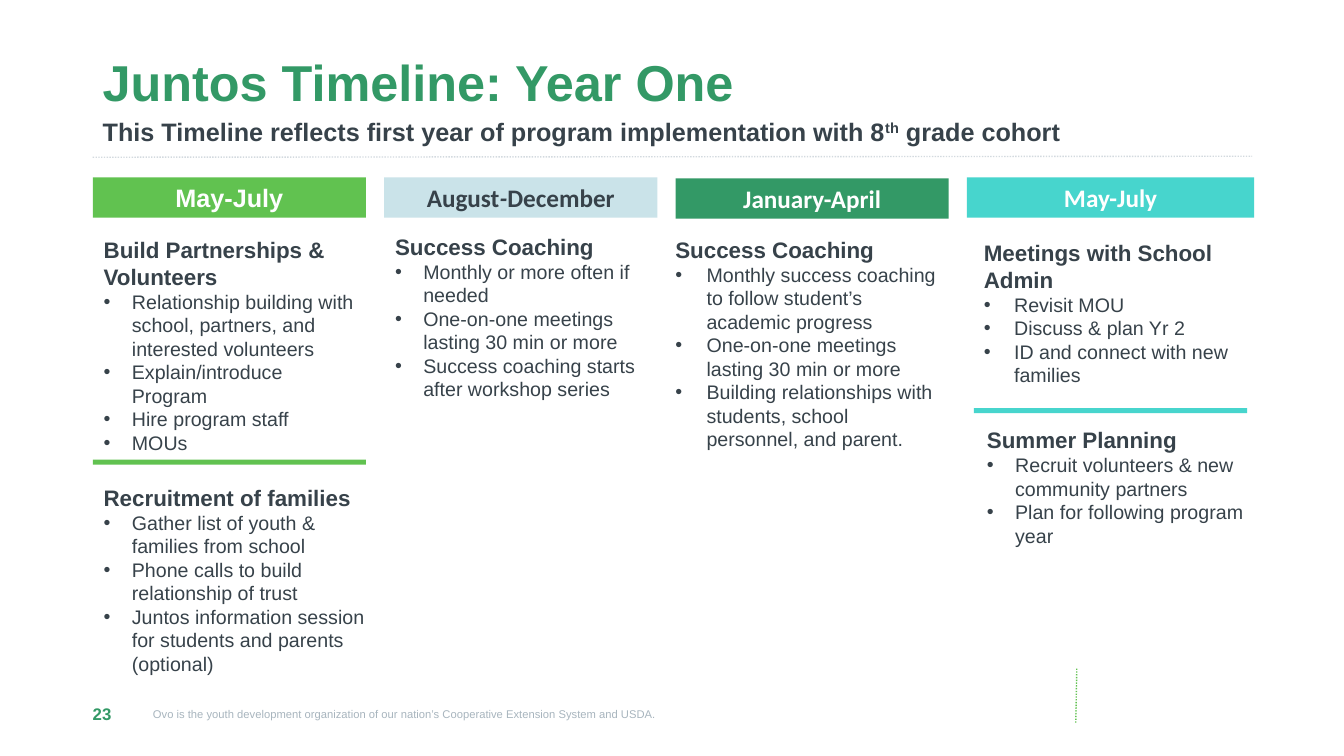
from lxml.etree import SubElement
from pptx import Presentation
from pptx.dml.color import RGBColor
from pptx.enum.dml import MSO_LINE
from pptx.enum.shapes import MSO_CONNECTOR as Connector, MSO_SHAPE as Shape
from pptx.enum.text import MSO_ANCHOR as Anchor, PP_ALIGN as Align
from pptx.oxml.ns import qn
from pptx.util import Inches, Pt

COLORS = {
    "green": "339966", "lime": "61C250", "ice": "CAE3E9", "teal": "47D5CD",
    "ink": "37424A", "white": "FFFFFF", "gray": "A8B5BE", "rule": "D3DADF",
}
CELL = 0.1  # inches per grid column and row
LEFT = 9.2  # grid column where the content starts
PITCH = 28.9  # grid columns from one period to the next
BAR_WIDTH = 27.1


def grid(*cells):
    return [Inches(cell * CELL) for cell in cells]


def color(name):
    return RGBColor.from_string(COLORS[name])


class TimelineSlide:
    """Style and drawing methods; all places are in grid columns and rows."""

    def __init__(self, presentation):
        self.slide = presentation.slides.add_slide(presentation.slide_layouts[6])
        self.font = "Arial"
        self.heading_size, self.body_size = 16, 14

    def run(self, paragraph, text, size, ink="ink", bold=False, font=None, italic=False):
        run = paragraph.add_run()
        run.text = text
        run.font.name = font or self.font
        run.font.size = Pt(size)
        run.font.bold, run.font.italic = bold, italic
        run.font.color.rgb = color(ink)
        return run

    def text_box(self, column, row, width, height, anchor=Anchor.TOP, sides=(0.1, 0.1)):
        box = self.slide.shapes.add_textbox(*grid(column, row, width, height))
        frame = box.text_frame
        frame.word_wrap = True
        frame.vertical_anchor = anchor
        frame.margin_left, frame.margin_right = map(Inches, sides)
        return frame.paragraphs[0]

    def bar(self, column, row, width, height, fill):
        shape = self.slide.shapes.add_shape(Shape.RECTANGLE, *grid(column, row, width, height))
        shape.shadow.inherit = False
        shape.fill.solid()
        shape.fill.fore_color.rgb = color(fill)
        shape.line.fill.background()
        return shape

    def header(self, column, row, width, fill, ink, font, parts):
        frame = self.bar(column, row, width, 4, fill).text_frame
        frame.vertical_anchor = Anchor.TOP
        paragraph = frame.paragraphs[0]
        paragraph.alignment = Align.CENTER
        for part in parts:
            self.run(paragraph, part, 18, ink, True, font, italic=part == "-")

    def dotted_line(self, start, end, ink):
        line = self.slide.shapes.add_connector(Connector.STRAIGHT, *grid(*start, *end))
        line.line.color.rgb = color(ink)
        line.line.width = Pt(1)
        line.line.dash_style = MSO_LINE.ROUND_DOT
        SubElement(line._element.spPr, qn("a:effectLst"))

    def activity(self, column, row, width, height, heading, items, indent=0.28):
        paragraph = self.text_box(column, row, width, height)
        self.run(paragraph, heading, self.heading_size, bold=True)
        frame = paragraph._parent
        for item in items:
            paragraph = frame.add_paragraph()
            properties = paragraph._p.get_or_add_pPr()
            properties.set("marL", str(Inches(indent)))
            properties.set("indent", str(-Inches(indent)))
            SubElement(properties, qn("a:buFont"), typeface="Arial")
            SubElement(properties, qn("a:buChar"), char="•")
            self.run(paragraph, item, self.body_size)


HEADERS = [  # fill, text colour, font, runs, row, width
    ("lime", "white", "Arial", ["May-July"], 17.6, BAR_WIDTH),
    ("ice", "ink", "Calibri", ["August", "-", "December"], 17.6, BAR_WIDTH),
    ("green", "white", "Calibri", ["January-April"], 17.7, BAR_WIDTH),
    ("teal", "white", "Calibri", ["May-July"], 17.6, 28.5),
]
ACTIVITIES = [  # column, row, width, height, heading, items, indent
    (9.3, 22.9, 27.1, 21.2, "Build Partnerships & Volunteers", [
        "Relationship building with school, partners, and interested volunteers",
        "Explain/introduce Program", "Hire program staff", "MOUs"], 0.28),
    (9.3, 47.5, 28.4, 15.6, "Recruitment of families", [
        "Gather list of youth & families from school",
        "Phone calls to build relationship of trust",
        "Juntos information session for students and parents (optional)"], 0.28),
    (38.2, 22.6, 27.1, 13.8, "Success Coaching", [
        "Monthly or more often if needed",
        "One-on-one meetings lasting 30 min or more",
        "Success coaching starts after workshop series"], 0.28),
    (66, 22.9, 28, 20.4, "Success Coaching", [
        "Monthly success coaching to follow student’s academic progress",
        "One-on-one meetings lasting 30 min or more",
        "Building relationships with students, school personnel, and parent."], 0.31),
    (96.6, 23.2, 30.4, 22.8, "Meetings with School Admin", [
        "Revisit MOU", "Discuss & plan Yr 2", "ID and connect with new families"], 0.3),
    (96.9, 41.8, 28.5, 14.8, "Summer Planning", [
        "Recruit volunteers & new community partners",
        "Plan for following program year"], 0.28),
]


def main():
    presentation = Presentation()
    presentation.slide_width, presentation.slide_height = Inches(13.33), Inches(7.5)
    timeline = TimelineSlide(presentation)

    # Footer and dotted rules
    footer = timeline.text_box(13.6, 68.8, 52.5, 4.1, Anchor.MIDDLE, (0, 0.1))
    footer.alignment = Align.RIGHT
    timeline.run(footer, "Ovo is the youth development organization of our nation’s "
                 "Cooperative Extension System and USDA.", 8, "gray")
    number = timeline.text_box(LEFT, 68.8, 4.3, 4.1, Anchor.MIDDLE, (0, 0))
    timeline.run(number, "23", 12, "green", True)
    timeline.dotted_line((LEFT, 15.6), (124.2, 15.5), "rule")
    timeline.dotted_line((106.7, 71.7), (106.8, 66.2), "lime")

    # Title and subtitle
    title = timeline.text_box(LEFT, 3.2, 115, 10.6, Anchor.MIDDLE)
    title.line_spacing = 0.9
    timeline.run(title, "Juntos Timeline: Year One", 36, "green", True)
    subtitle = timeline.text_box(LEFT, 11, 102.5, 7.1)
    timeline.run(subtitle, "This Timeline reflects first year of program "
                 "implementation with 8", 18, bold=True)
    ordinal = timeline.run(subtitle, "th", 18, bold=True)
    ordinal._r.get_or_add_rPr().set("baseline", "30000")
    timeline.run(subtitle, " grade cohort", 18, bold=True)

    # Period headers
    for index, (fill, ink, font, parts, row, width) in enumerate(HEADERS):
        timeline.header(LEFT + index * PITCH, row, width, fill, ink, font, parts)

    # Activities and the bars between them
    for activity in ACTIVITIES:
        timeline.activity(*activity)
    timeline.bar(LEFT, 45.6, BAR_WIDTH, 0.5, "lime")
    timeline.bar(96.6, 40.5, BAR_WIDTH, 0.5, "teal")

    presentation.save("out.pptx")


if __name__ == "__main__":
    main()
